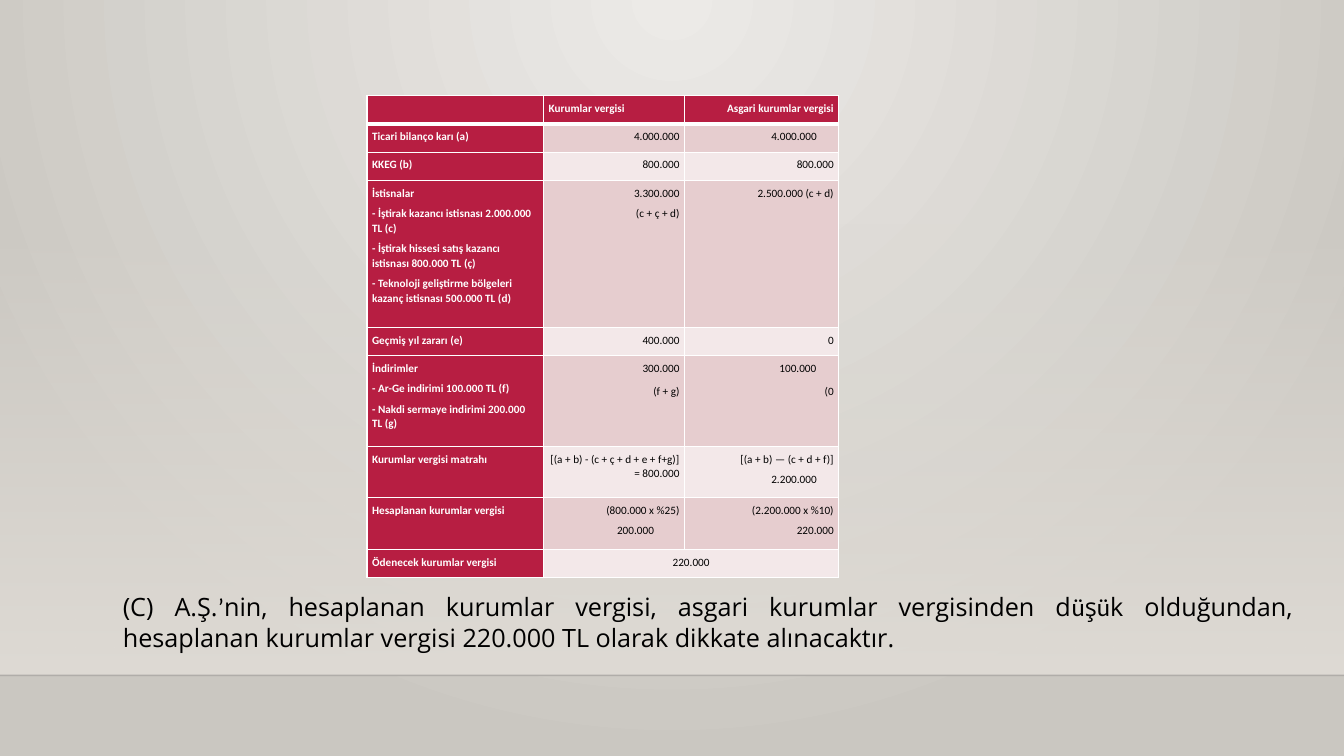
from pptx import Presentation
from pptx.dml.color import RGBColor
from pptx.enum.shapes import MSO_CONNECTOR, MSO_SHAPE
from pptx.enum.text import MSO_AUTO_SIZE, PP_ALIGN
from pptx.oxml import parse_xml
from pptx.oxml.ns import nsdecls
from pptx.util import Inches, Pt
from lxml.etree import SubElement

HUES = {"red": "B71E42", "pink": "E6CDCF", "pale": "F3E8E9", "white": "FFFFFF",
        "black": "000000", "line": "000001", "glow": "ECEAE7", "edge": "CAC7C1",
        "floor": "DFDBD5"}
LEFT, RIGHT = PP_ALIGN.LEFT, PP_ALIGN.RIGHT
WIDE, HIGH, BASE = 13.33, 7.5, 6.7


def grad(start, end, shade, alpha=100):
    return parse_xml(
        f'<a:gradFill {nsdecls("a")} rotWithShape="1"><a:gsLst>'
        f'<a:gs pos="0"><a:srgbClr val="{HUES[start]}"><a:alpha val="{alpha * 1000}"/></a:srgbClr></a:gs>'
        f'<a:gs pos="100000"><a:srgbClr val="{HUES[end]}"/></a:gs>'
        f'</a:gsLst>{shade}</a:gradFill>')


def write(para, text, size, face, hue, bold=False):
    run = para.add_run()
    run.text = text
    run.font.size = Pt(size)
    run.font.name = face
    run.font.bold = bold
    run.font.color.rgb = RGBColor.from_string(HUES[hue])


deck = Presentation()
deck.slide_width, deck.slide_height = Inches(WIDE), Inches(HIGH)
slide = deck.slides.add_slide(deck.slide_layouts[6])

fill = slide.background.fill
fill.solid()
back = slide.element.cSld.bg.bgPr
back.replace(back[0], grad(
    "glow", "edge",
    '<a:path path="circle"><a:fillToRect l="43000" r="43000" b="100000"/></a:path>'))

wall = slide.shapes.add_shape(
    MSO_SHAPE.RECTANGLE, 0, Inches(2.21), Inches(WIDE), Inches(BASE - 2.21))
wall.shadow.inherit = False
wall.line.fill.background()
wall.fill.solid()
props = wall.element.spPr
props.replace(props.find("{*}solidFill"),
              grad("floor", "floor", '<a:lin ang="5400000" scaled="0"/>', 0))

edge = slide.shapes.add_connector(
    MSO_CONNECTOR.STRAIGHT, 0, Inches(BASE), Inches(WIDE), Inches(BASE))
edge.line.width = Pt(1)
edge.line.color.rgb = RGBColor.from_string(HUES["line"])
tint = edge.element.spPr.find(".//{*}srgbClr")
SubElement(tint, tint.tag.replace("srgbClr", "alpha"), val="20000")
edge.element.spPr.append(parse_xml(f'<a:effectLst {nsdecls("a")}/>'))

rows = [
    (0.28, 4, [], ["Kurumlar vergisi"], ["Asgari kurumlar vergisi"]),
    (0.28, 4, ["Ticari bilanço karı (a)"], ["4.000.000"], ["4.000.000"]),
    (0.28, 4, ["KKEG (b)"], ["800.000"], ["800.000"]),
    (1.46, 4,
     ["İstisnalar",
      "- İştirak kazancı istisnası 2.000.000 TL (c)",
      "- İştirak hissesi satış kazancı istisnası 800.000 TL (ç)",
      "- Teknoloji geliştirme bölgeleri kazanç istisnası 500.000 TL (d)"],
     ["3.300.000", "(c + ç + d)"], ["2.500.000 (c + d)"]),
    (0.28, 4, ["Geçmiş yıl zararı (e)"], ["400.000"], ["0"]),
    (0.9, 6,
     ["İndirimler", "- Ar-Ge indirimi 100.000 TL (f)",
      "- Nakdi sermaye indirimi 200.000 TL (g)"],
     ["300.000", "(f + g)"], ["100.000", "(0"]),
    (0.51, 4, ["Kurumlar vergisi matrahı"],
     ["[(a + b) - (c + ç + d + e + f+g)] = 800.000"],
     ["[(a + b) — (c + d + f)]", "2.200.000"]),
    (0.51, 4, ["Hesaplanan kurumlar vergisi"],
     ["(800.000 x %25)", "200.000"], ["(2.200.000 x %10)", "220.000"]),
    (0.28, 4, ["Ödenecek kurumlar vergisi"], ["220.000"], []),
]
cols = [1.75, 1.4, 1.53]
shifts = {(1, 2, 0): (0.81, 0), (5, 2, 0): (0.89, 0),
          (6, 2, 1): (0.81, 0), (7, 1, 1): (0, 0.68)}
last = len(rows) - 1

table = slide.shapes.add_table(
    len(rows), len(cols), Inches(3.64), Inches(0.95),
    Inches(sum(cols)), Inches(sum(row[0] for row in rows))).table
table.first_col = True
for col, width in zip(table.columns, cols):
    col.width = Inches(width)
table.cell(last, 1).merge(table.cell(last, 2))

for r, (height, gap, *cells) in enumerate(rows):
    table.rows[r].height = Inches(height)
    for c, lines in enumerate(cells):
        cell = table.cell(r, c)
        cell.margin_left = cell.margin_right = Inches(0.05)
        cell.margin_top = cell.margin_bottom = Inches(0.05)
        head = r == 0 or c == 0
        for side in "LRTB":
            thick = 3 if (r, side) in ((0, "B"), (1, "T")) else 1
            cell._tc.get_or_add_tcPr().append(parse_xml(
                f'<a:ln{side} {nsdecls("a")} w="{Pt(thick)}"><a:solidFill>'
                f'<a:srgbClr val="{HUES["white"]}"/></a:solidFill></a:ln{side}>'))
        cell.fill.solid()
        cell.fill.fore_color.rgb = RGBColor.from_string(
            HUES["red" if head else "pink" if r % 2 else "pale"])
        frame = cell.text_frame
        if not lines:
            frame.paragraphs[0]._p.append(
                parse_xml(f'<a:endParaRPr {nsdecls("a")} sz="800"/>'))
        for i, line in enumerate(lines):
            para = frame.add_paragraph() if i else frame.paragraphs[0]
            para.line_spacing = 1.07
            para.space_after = Pt(7.5 if i == len(lines) - 1 else gap if c else 4)
            para.alignment = LEFT if c == 0 or (r, c) == (0, 1) else RIGHT
            if r == last and c:
                para.alignment = PP_ALIGN.CENTER
            if (r, c, i) in shifts:
                left, first = shifts[r, c, i]
                para.alignment = LEFT
                form = para._p.get_or_add_pPr()
                form.set("marL", str(Inches(left)))
                form.set("indent", str(Inches(first)))
            write(para, line, 8, "Calibri", "white" if head else "black", head)

note = slide.shapes.add_textbox(
    Inches(1.12), Inches(5.82), Inches(11.8), Inches(0.71)).text_frame
note.word_wrap = True
note.auto_size = MSO_AUTO_SIZE.SHAPE_TO_FIT_TEXT
para = note.paragraphs[0]
para.alignment = PP_ALIGN.JUSTIFY
parts = ["(C) A.Ş.", "’",
         "nin, hesaplanan kurumlar vergisi, asgari kurumlar vergisinden d",
         "ü", "ş", "ü",
         "k olduğundan, hesaplanan kurumlar vergisi 220.000 TL olarak dikkate alınacaktır."]
for i, part in enumerate(parts):
    write(para, part, 18, "Calibri" if i % 2 else "Open Sans", "black")

deck.save("out.pptx")
